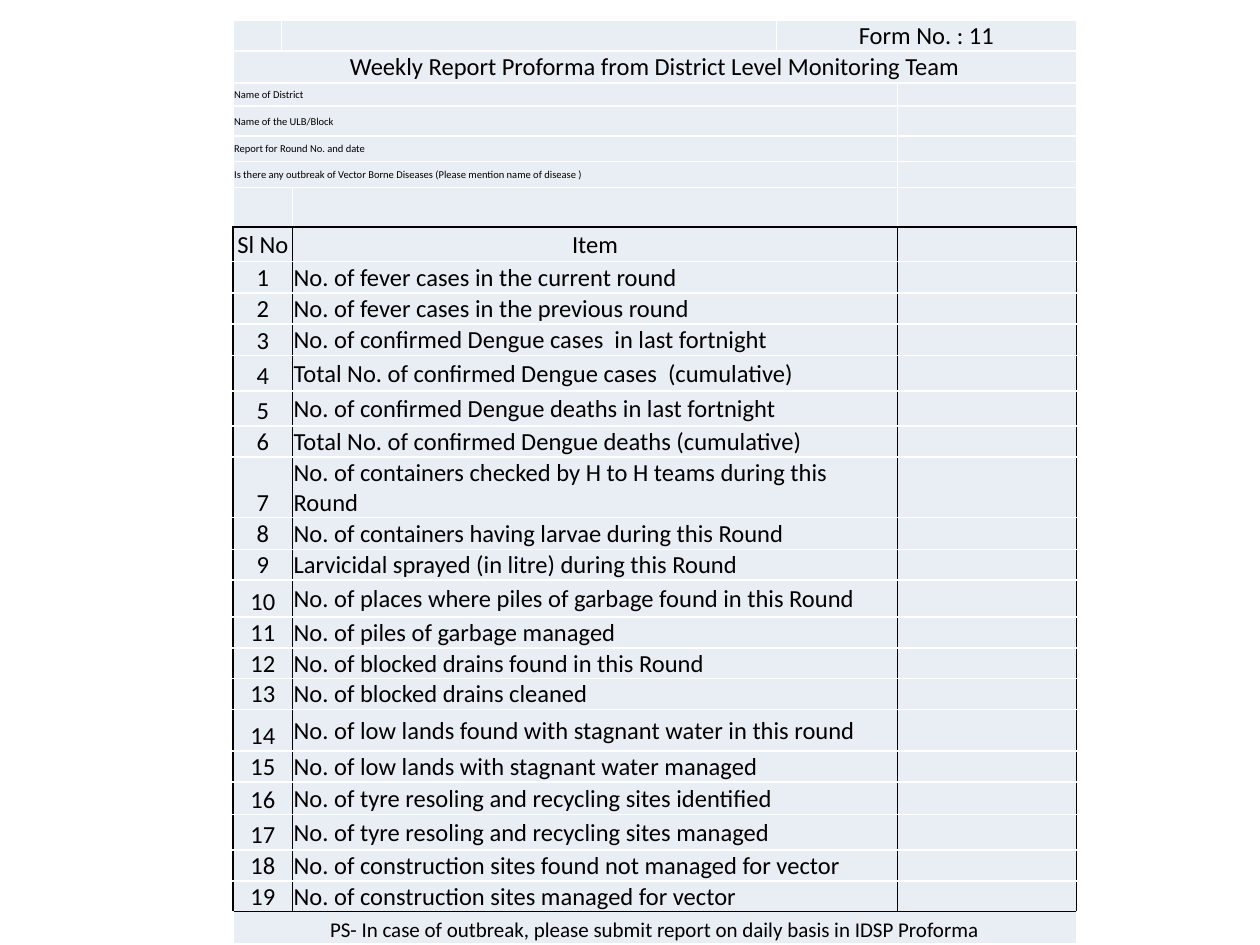
import pptx
import pptx.dml.color
import pptx.enum.text
import pptx.oxml
import pptx.oxml.ns
import pptx.util
from pptx.util import Cm

BLACK = pptx.dml.color.RGBColor(0x00, 0x00, 0x00)
WHITE = pptx.dml.color.RGBColor(0xFF, 0xFF, 0xFF)
PALE_BLUE = pptx.dml.color.RGBColor(0xE9, 0xED, 0xF4)

LEFT = pptx.enum.text.PP_ALIGN.LEFT
CENTER = pptx.enum.text.PP_ALIGN.CENTER
MIDDLE = pptx.enum.text.MSO_ANCHOR.MIDDLE
BOTTOM = pptx.enum.text.MSO_ANCHOR.BOTTOM

# Border colours in the order left, right, top, bottom
OPEN = (WHITE, WHITE, WHITE, WHITE)
ABOVE_ITEMS = (WHITE, WHITE, WHITE, BLACK)
HEADER = (BLACK, BLACK, BLACK, WHITE)
BODY = (BLACK, BLACK, WHITE, WHITE)
LAST_ITEM = (BLACK, BLACK, WHITE, BLACK)
FOOTER = (WHITE, WHITE, BLACK, WHITE)

COL_WIDTHS = [0.97, 0.23, 9.75, 2.44, 3.61]
TOP_HEIGHTS = [0.41, 0.64, 0.46, 0.61, 0.51, 0.53, 0.2, 0.69]
FOOTER_HEIGHT = 0.64

DETAILS = [
    "Name of District",
    "Name of the ULB/Block",
    "Report for Round No. and date",
    "Is there any outbreak of Vector Borne Diseases (Please mention name of disease )",
]
ITEMS = [
    ("No. of fever cases in the current round", 0.64),
    ("No. of fever cases in the previous round", 0.58),
    ("No. of confirmed Dengue cases  in last fortnight", 0.64),
    ("Total No. of confirmed Dengue cases  (cumulative)", 0.71),
    ("No. of confirmed Dengue deaths in last fortnight", 0.71),
    ("Total No. of confirmed Dengue deaths (cumulative)", 0.56),
    ("No. of containers checked by H to H teams during this Round", 0.99),
    ("No. of containers having larvae during this Round", 0.64),
    ("Larvicidal sprayed (in litre) during this Round", 0.53),
    ("No. of places where piles of garbage found in this Round", 0.74),
    ("No. of piles of garbage managed", 0.51),
    ("No. of blocked drains found in this Round", 0.58),
    ("No. of blocked drains cleaned", 0.58),
    ("No. of low lands found with stagnant water in this round", 0.84),
    ("No. of low lands with stagnant water managed", 0.58),
    ("No. of tyre resoling and recycling sites identified", 0.66),
    ("No. of tyre resoling and recycling sites managed", 0.71),
    ("No. of construction sites found not managed for vector", 0.58),
    ("No. of construction sites managed for vector", 0.56),
]


class FormSlide:
    font = "Calibri"
    fill = PALE_BLUE
    margins = {
        "margin_left": Cm(0.02),
        "margin_top": Cm(0.02),
        "margin_right": Cm(0.02),
        "margin_bottom": Cm(0),
    }

    def __init__(self, prs):
        self.s = prs.slides.add_slide(prs.slide_layouts[6])

    def table(self, left, top, widths, heights):
        frame = self.s.shapes.add_table(
            len(heights), len(widths), Cm(left), Cm(top),
            Cm(sum(widths)), Cm(sum(heights)))
        self.tbl = frame.table
        self.tbl.first_row = self.tbl.horz_banding = False
        for col, width in zip(self.tbl.columns, widths):
            col.width = Cm(width)
        for row, height in zip(self.tbl.rows, heights):
            row.height = Cm(height)

    def borders(self, cell, colors):
        tc_pr = cell._tc.get_or_add_tcPr()
        for side, color in zip("LRTB", colors):
            tc_pr.append(pptx.oxml.parse_xml(
                f'<a:ln{side} {pptx.oxml.ns.nsdecls("a")} w="12700">'
                f'<a:solidFill><a:srgbClr val="{color}"/></a:solidFill>'
                f'</a:ln{side}>'))

    def cell(self, row, first, last, colors, text="", size=14,
             align=LEFT, anchor=MIDDLE):
        """Style columns first to last of a row as one cell."""
        for col in range(first, last + 1):
            part = self.tbl.cell(row, col)
            self.borders(part, colors)
            part.fill.solid()
            part.fill.fore_color.rgb = self.fill
        cell = self.tbl.cell(row, first)
        if last > first:
            cell.merge(self.tbl.cell(row, last))
        for name, value in {**self.margins, "vertical_anchor": anchor}.items():
            setattr(cell, name, value)
        p = cell.text_frame.paragraphs[0]
        p.alignment = align
        if not text:
            p._p.get_or_add_endParaRPr().set("sz", str(size * 100))
            return
        r = p.add_run()
        r.text = text
        for name, value in {"name": self.font, "size": pptx.util.Pt(size)}.items():
            setattr(r.font, name, value)
        r.font.color.rgb = BLACK

    def item_row(self, row, colors, number, item, align=LEFT, anchor=BOTTOM):
        self.cell(row, 0, 1, colors, number, align=CENTER, anchor=anchor)
        self.cell(row, 2, 3, colors, item, align=align)
        self.cell(row, 4, 4, colors, size=6)


def main():
    prs = pptx.Presentation()
    prs.slide_width, prs.slide_height = Cm(25.4), Cm(19.05)
    form = FormSlide(prs)
    heights = TOP_HEIGHTS + [height for _, height in ITEMS] + [FOOTER_HEIGHT]
    form.table(4.7, 0.41, COL_WIDTHS, heights)

    form.cell(0, 0, 0, OPEN, size=6)
    form.cell(0, 1, 2, OPEN, size=6)
    form.cell(0, 3, 4, OPEN, "Form No. : 11", align=CENTER)
    form.cell(1, 0, 4, OPEN, align=CENTER,
              text="Weekly Report Proforma from District Level Monitoring Team")
    for row, detail in enumerate(DETAILS, 2):
        form.cell(row, 0, 3, OPEN, detail, size=6)
        form.cell(row, 4, 4, OPEN, size=6)
    for first, last in ((0, 1), (2, 3), (4, 4)):
        form.cell(6, first, last, ABOVE_ITEMS, size=18)

    form.item_row(7, HEADER, "Sl No", "Item", CENTER, MIDDLE)
    for number, (item, _) in enumerate(ITEMS, 1):
        colors = LAST_ITEM if number == len(ITEMS) else BODY
        form.item_row(7 + number, colors, str(number), item)
    form.cell(len(heights) - 1, 0, 4, FOOTER, size=12, align=CENTER, anchor=BOTTOM,
              text="PS- In case of outbreak, please submit report on daily basis "
                   "in IDSP Proforma")
    prs.save("out.pptx")


if __name__ == "__main__":
    main()
